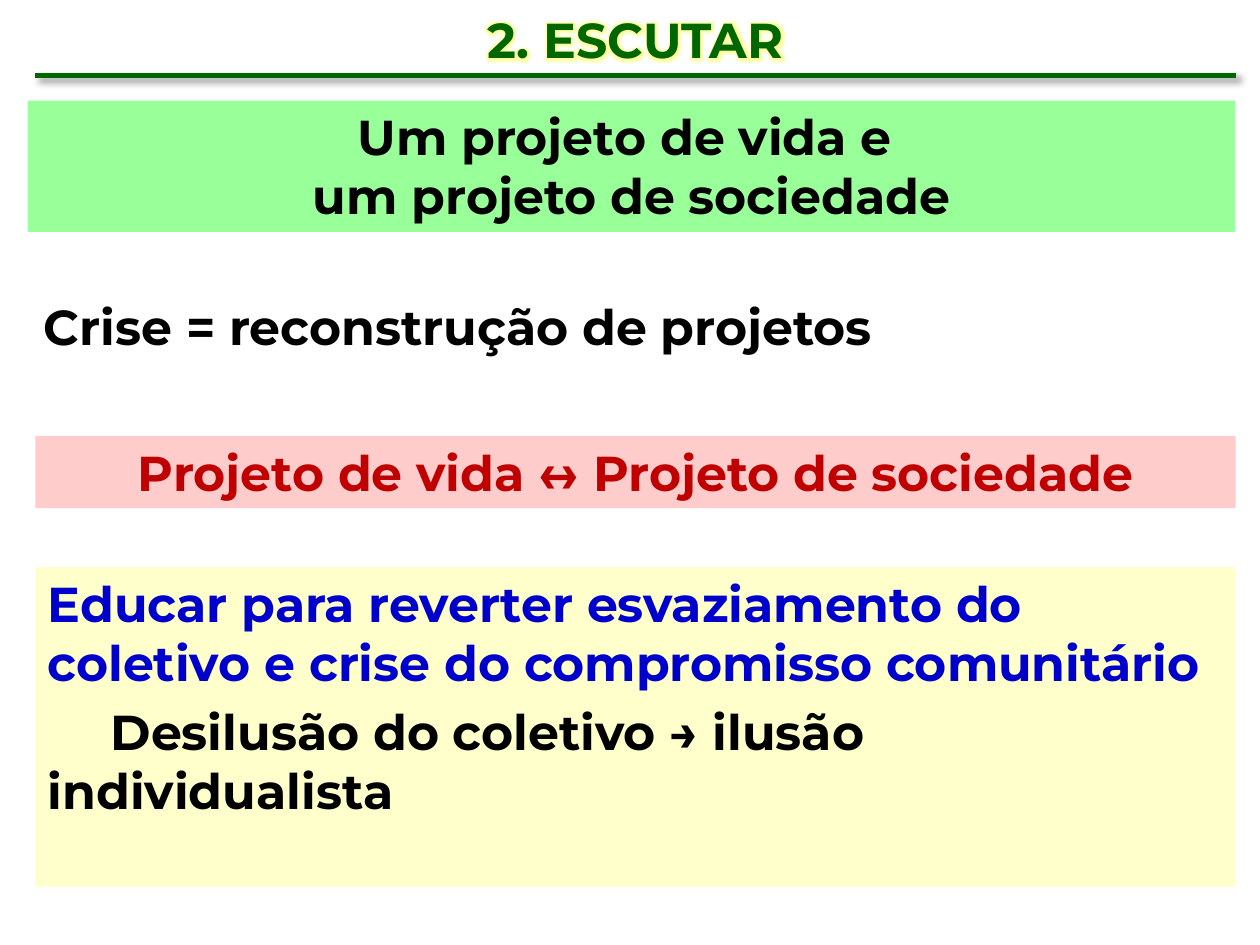
from dataclasses import dataclass
from typing import Optional

import pptx
import pptx.dml.color
import pptx.enum.shapes
import pptx.enum.text
import pptx.oxml
import pptx.oxml.ns
import pptx.util
from pptx.util import Pt

FONT = "Montserrat"
SIZE = 28
COLORS = {
    "heading": "006600",
    "glow": "FFFF66",
    "shadow": "000000",
    "text": "000000",
    "red": "C00000",
    "blue": "0000CC",
    "green_band": "99FF99",
    "pink_band": "FFCCCC",
    "yellow_band": "FFFFCC",
}
LEFT, WIDTH = 20.16, 686
CENTER = pptx.enum.text.PP_ALIGN.CENTER
START = pptx.enum.text.PP_ALIGN.LEFT


@dataclass
class Line:
    text: str
    color: str = "text"


@dataclass
class Block:
    left: float
    top: float
    width: float
    height: float
    lines: list[Line]
    align: pptx.enum.text.PP_ALIGN = START
    space_after: float = 6
    fill: Optional[str] = None


def rgb(name: str) -> pptx.dml.color.RGBColor:
    return pptx.dml.color.RGBColor.from_string(COLORS[name])


def effects(content: str):
    """Effect list element holding the given effects."""
    return pptx.oxml.parse_xml(
        f'<a:effectLst {pptx.oxml.ns.nsdecls("a")}>{content}</a:effectLst>')


def style(paragraph, color: str, align, space_after: float) -> None:
    paragraph.alignment = align
    paragraph.space_before = Pt(0)
    paragraph.space_after = Pt(space_after)
    font = paragraph.font
    font.name, font.size, font.bold = FONT, Pt(SIZE), True
    font.color.rgb = rgb(color)


def draw_block(slide, block: Block) -> None:
    box = (Pt(block.left), Pt(block.top), Pt(block.width), Pt(block.height))
    if block.fill:
        shape = slide.shapes.add_shape(
            pptx.enum.shapes.MSO_SHAPE.RECTANGLE, *box)
        shape.shadow.inherit = False
        shape.fill.solid()
        shape.fill.fore_color.rgb = rgb(block.fill)
        shape.line.fill.background()
    else:
        shape = slide.shapes.add_textbox(*box)
    frame = shape.text_frame
    frame.word_wrap = True
    frame.vertical_anchor = pptx.enum.text.MSO_ANCHOR.TOP
    for i, line in enumerate(block.lines):
        paragraph = frame.add_paragraph() if i else frame.paragraphs[0]
        paragraph.add_run().text = line.text
        style(paragraph, line.color, block.align, block.space_after)


def draw_title(slide, text: str) -> None:
    title = slide.shapes.title
    title.left, title.top = Pt(LEFT), Pt(3.6)
    title.width, title.height = Pt(WIDTH), Pt(37.4)
    frame = title.text_frame
    frame.word_wrap = True
    frame.auto_size = pptx.enum.text.MSO_AUTO_SIZE.NONE
    frame.vertical_anchor = pptx.enum.text.MSO_ANCHOR.MIDDLE
    paragraph = frame.paragraphs[0]
    run = paragraph.add_run()
    run.text = text
    style(paragraph, "heading", CENTER, 0)
    # Soft yellow glow around the letters
    run.font._element.append(effects(
        f'<a:glow rad="{Pt(5)}"><a:srgbClr val="{COLORS["glow"]}">'
        '<a:alpha val="60000"/></a:srgbClr></a:glow>'))


def draw_rule(slide, y: float) -> None:
    rule = slide.shapes.add_connector(
        pptx.enum.shapes.MSO_CONNECTOR.STRAIGHT,
        Pt(LEFT), Pt(y), Pt(LEFT + WIDTH), Pt(y))
    rule.line.color.rgb = rgb("heading")
    rule.line.width = Pt(3)
    rule._element.spPr.append(effects(
        f'<a:outerShdw blurRad="{Pt(4)}" dist="{Pt(3)}" dir="2700000" '
        f'algn="tl" rotWithShape="0"><a:srgbClr val="{COLORS["shadow"]}">'
        '<a:alpha val="40000"/></a:srgbClr></a:outerShdw>'))


BLOCKS = [
    Block(18, 165.6, 684.7, 41.2, [Line("Crise = reconstrução de projetos")]),
    Block(LEFT, 249.2, WIDTH, 41.2,
          [Line("Projeto de vida ↔ Projeto de sociedade", "red")],
          align=CENTER, fill="pink_band"),
    Block(15.9, 57.5, 690, 75.1,
          [Line("Um projeto de vida e "), Line("um projeto de sociedade")],
          align=CENTER, space_after=0, fill="green_band"),
    Block(LEFT, 324, WIDTH, 182.7,
          [Line("Educar para reverter esvaziamento do coletivo e crise "
                "do compromisso comunitário", "blue"),
           Line("\tDesilusão do coletivo → ilusão individualista")],
          fill="yellow_band"),
]


def main() -> None:
    deck = pptx.Presentation()
    deck.slide_width, deck.slide_height = Pt(720), Pt(540)
    slide = deck.slides.add_slide(deck.slide_layouts[5])

    # Heading and its rule
    draw_title(slide, "2. ESCUTAR")
    draw_rule(slide, 43.2)

    # Statements
    for block in BLOCKS:
        draw_block(slide, block)

    deck.save("out.pptx")


if __name__ == "__main__":
    main()
